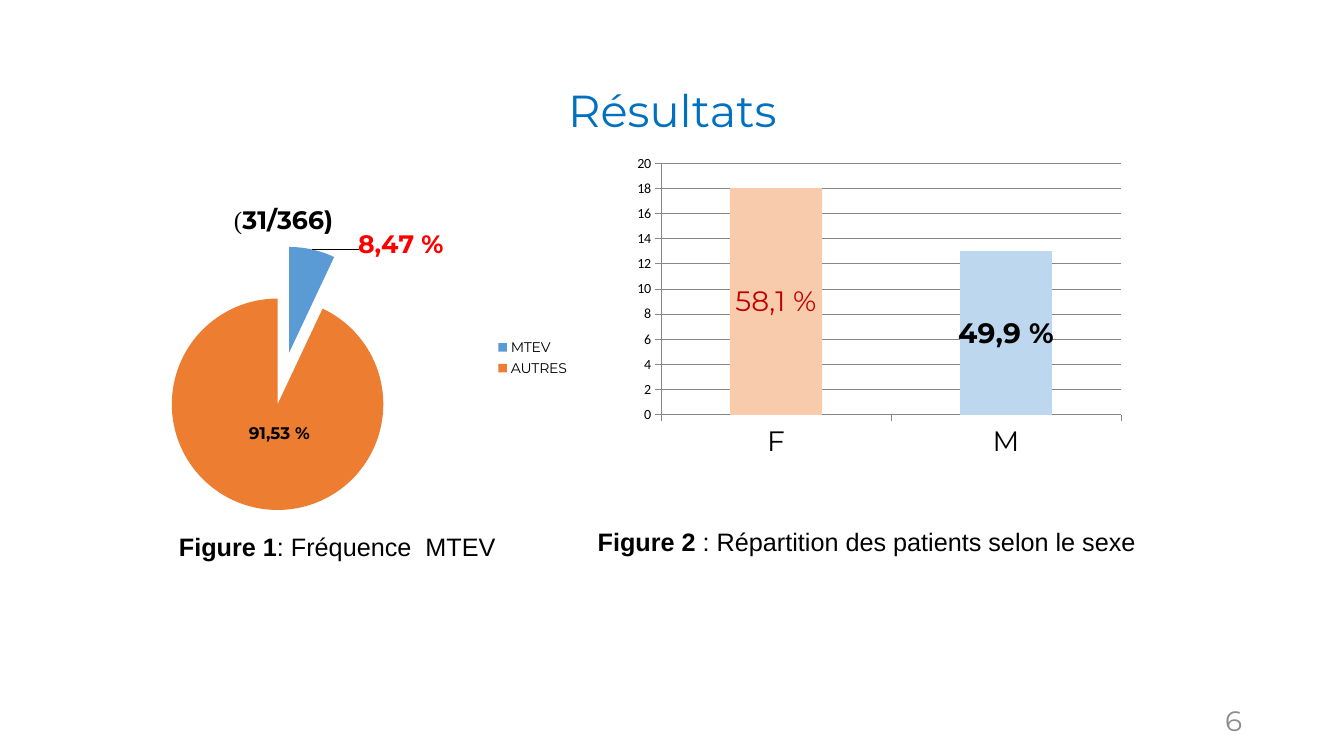
import pptx
import pptx.chart.data
import pptx.dml.color
import pptx.enum.chart
import pptx.enum.text
import pptx.oxml
import pptx.oxml.ns
import pptx.util

PX = 9144
ALIGN = pptx.enum.text.PP_ALIGN
ANCHOR = pptx.enum.text.MSO_ANCHOR
FIT = pptx.enum.text.MSO_AUTO_SIZE
CHART = pptx.enum.chart.XL_CHART_TYPE
LABEL = pptx.enum.chart.XL_LABEL_POSITION
LEGEND = pptx.enum.chart.XL_LEGEND_POSITION
TICK = pptx.enum.chart.XL_TICK_MARK


def px(*lengths):
    return [length * PX for length in lengths]


def color(value):
    return pptx.dml.color.RGBColor.from_string(value)


def apply(target, values):
    for name, value in values.items():
        setattr(target, name, value)


def set_font(font, size, name, shade="000000", bold=False):
    apply(font, {"size": pptx.util.Pt(size), "name": name, "bold": bold})
    font.color.rgb = color(shade)


def write(frame, spans, frame_format, para_format, indent=0):
    apply(frame, frame_format)
    para = frame.paragraphs[0]
    apply(para, para_format)
    if indent:
        para._p.get_or_add_pPr().set("marL", str(indent * PX))
    for text, *style in spans:
        span = para.add_run()
        span.text = text
        set_font(span.font, *style)


def add_text(page, area, spans, frame_format, para_format, indent=0):
    box = page.shapes.add_textbox(*px(*area))
    write(box.text_frame, spans, frame_format, para_format, indent)


def add_layout(parent, index, **values):
    namespace = pptx.oxml.ns.nsdecls("c")
    children = "".join(f'<c:{key} val="{value}"/>' for key, value in values.items())
    for old in parent.findall(pptx.oxml.ns.qn("c:layout")):
        parent.remove(old)
    parent.insert(index, pptx.oxml.parse_xml(
        f"<c:layout {namespace}><c:manualLayout>{children}</c:manualLayout></c:layout>"))


def add_chart(page, kind, area, categories, values, fills, labels):
    data = pptx.chart.data.CategoryChartData()
    data.categories = categories
    data.add_series("Series 1", values)
    chart = page.shapes.add_chart(kind, *px(*area), data).chart
    chart.has_title = False
    chart.has_legend = False
    set_font(chart.font, 10, "Calibri")
    series = chart.plots[0].series[0]
    for index, (fill, (text, position, *style)) in enumerate(zip(fills, labels)):
        point = series.points[index]
        point.format.fill.solid()
        point.format.fill.fore_color.rgb = color(fill)
        write(point.data_label.text_frame, [(text, *style)], {"word_wrap": False}, {})
        point.data_label.position = position
    return chart


def add_frequency_pie(page):
    chart = add_chart(
        page, CHART.PIE, (133, 197, 442, 316), ["MTEV", "AUTRES"], [7, 93],
        ["5B9BD5", "ED7D31"],
        [("8,47 %", LABEL.OUTSIDE_END, 18, "Montserrat", "FF0000", True),
         ("91,53 %", LABEL.CENTER, 12, "Montserrat", "000000", True)])
    chart.has_legend = True
    apply(chart.legend, {"position": LEGEND.RIGHT, "include_in_layout": False})
    set_font(chart.legend.font, 10, "Montserrat")
    plot_area = chart.plots[0]._element.getparent()
    add_layout(plot_area, 0, layoutTarget="inner", xMode="edge", yMode="edge",
               x=0, y=0.15, w=0.67, h=0.83)
    series = chart.plots[0].series[0]._element
    explosion = pptx.oxml.parse_xml(
        f'<c:explosion {pptx.oxml.ns.nsdecls("c")} val="25"/>')
    series.find(pptx.oxml.ns.qn("c:dPt")).addprevious(explosion)
    offsets = [(0.1, 0.05), (0.03, -0.07)]
    for label, (x, y) in zip(series.iter(pptx.oxml.ns.qn("c:dLbl")), offsets):
        add_layout(label, 1, x=x, y=y)


def add_sex_columns(page):
    chart = add_chart(
        page, CHART.COLUMN_STACKED, (622, 148, 500, 314), ["F", "M"], [18, 13],
        ["F8CBAD", "BDD7EE"],
        [("58,1 %", LABEL.CENTER, 20, "Montserrat", "C00000"),
         ("49,9 %", LABEL.CENTER, 20, "Montserrat", "000000", True)])
    apply(chart.plots[0], {"gap_width": 150, "overlap": 100, "vary_by_categories": False})
    apply(chart.value_axis, {"minimum_scale": 0, "maximum_scale": 20, "major_unit": 2})
    for axis in (chart.category_axis, chart.value_axis):
        axis.major_tick_mark = TICK.OUTSIDE
        axis.format.line.color.rgb = color("878787")
    chart.value_axis.major_gridlines.format.line.color.rgb = color("878787")
    set_font(chart.category_axis.tick_labels.font, 20, "Montserrat")


def main():
    deck = pptx.Presentation()
    deck.slide_width, deck.slide_height = px(1333, 750)
    page = deck.slides.add_slide(deck.slide_layouts[5])
    title = page.shapes.title
    apply(title, dict(zip(("left", "top", "width", "height"), px(92, 40, 1150, 145))))
    write(title.text_frame, [("Résultats", 32, "Montserrat", "0070C0")],
          {"vertical_anchor": ANCHOR.MIDDLE, "word_wrap": True},
          {"alignment": ALIGN.CENTER, "line_spacing": 0.9})
    add_text(page, (942, 695, 300, 40), [("6", 20, "Montserrat", "8C8C8C")],
             {"vertical_anchor": ANCHOR.MIDDLE, "word_wrap": True},
             {"alignment": ALIGN.RIGHT})
    add_frequency_pie(page)
    grow = {"word_wrap": False, "auto_size": FIT.SHAPE_TO_FIT_TEXT}
    add_text(page, (216, 198, 142, 40),
             [(" (", 18, "Times New Roman"),
              ("31/366)", 18, "Montserrat", "000000", True)], grow, {})
    add_sex_columns(page)
    add_text(page, (533, 519, 616, 38),
             [("Figure 2 ", 18, "Arial", "000000", True),
              (": Répartition des patients selon le sexe ", 18, "Arial")],
             grow, {"line_spacing": pptx.util.Pt(20)}, indent=50)
    add_text(page, (73, 522, 530, 53),
             [("Figure 1", 18, "Arial", "000000", True),
              (": Fréquence  MTEV ", 18, "Arial")],
             {"word_wrap": True}, {"alignment": ALIGN.CENTER})
    deck.save("out.pptx")


if __name__ == "__main__":
    main()
